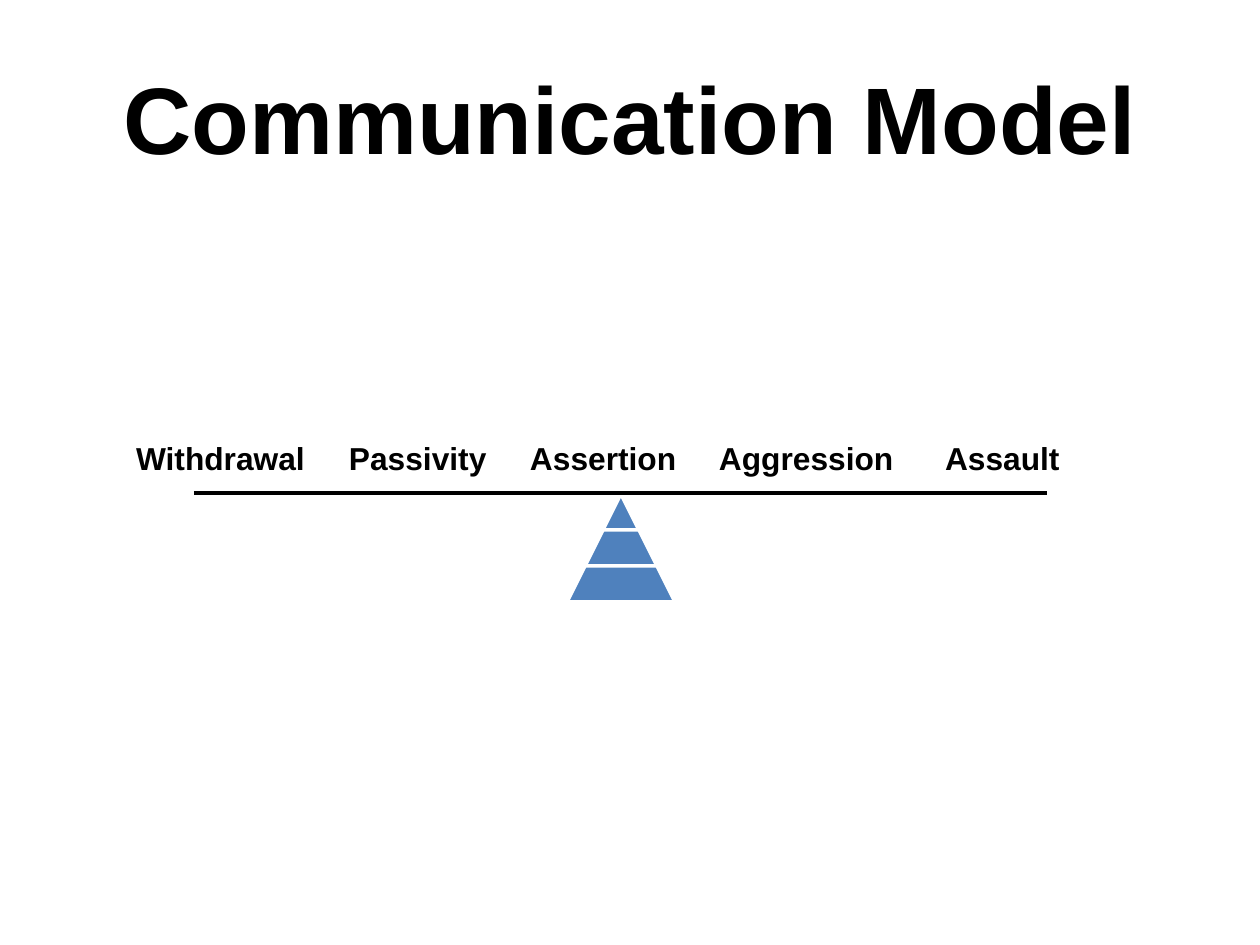
from lxml import etree
from pptx import Presentation
from pptx.dml.color import RGBColor
from pptx.enum.shapes import MSO_CONNECTOR, MSO_SHAPE
from pptx.enum.text import MSO_ANCHOR, MSO_AUTO_SIZE, PP_ALIGN
from pptx.oxml.ns import qn
from pptx.util import Pt

PX = 914400 // 126
LINE, TRAPEZOID = MSO_CONNECTOR.STRAIGHT, MSO_SHAPE.TRAPEZOID
TOP, MIDDLE = MSO_ANCHOR.TOP, MSO_ANCHOR.MIDDLE
LEFT, CENTER = PP_ALIGN.LEFT, PP_ALIGN.CENTER
NO_FIT = MSO_AUTO_SIZE.NONE
TITLE_ONLY = 5


def color(hex_text):
    return RGBColor.from_string(hex_text)


def emu(*lengths):
    return [v * PX for v in lengths]


def write(tf, text, size, font="Arial", fill="000000", bold=True,
          align=LEFT, anchor=TOP):
    tf.auto_size = NO_FIT
    tf.vertical_anchor = anchor
    p = tf.paragraphs[0]
    p.alignment = align
    r = p.add_run()
    r.text = text
    r.font.name, r.font.size, r.font.bold = font, Pt(size), bold
    r.font.color.rgb = color(fill)


class Deck:
    ink, accent, paper = "000000", "4F81BD", "FFFFFF"
    line_width = 2

    def __init__(self, prs):
        self.s = prs.slides.add_slide(prs.slide_layouts[TITLE_ONLY])

    def title(self, text, x, y, w, h):
        sp = self.s.shapes.title
        sp.left, sp.top, sp.width, sp.height = emu(x, y, w, h)
        write(sp.text_frame, text, 54, fill=self.ink, align=CENTER, anchor=MIDDLE)

    def label(self, text, x, y, w, h):
        tf = self.s.shapes.add_textbox(*emu(x, y, w, h)).text_frame
        tf.margin_left = tf.margin_right = tf.margin_top = tf.margin_bottom = 0
        tf.word_wrap = True
        write(tf, text, 18.1, fill=self.ink)

    def trapezoid(self, x, y, w, h):
        sp = self.s.shapes.add_shape(TRAPEZOID, *emu(x, y, w, h))
        sp.adjustments[0] = 0.5
        sp.shadow.inherit = False
        sp.fill.solid()
        sp.fill.fore_color.rgb = color(self.accent)
        sp.line.color.rgb = color(self.paper)
        sp.line.width = Pt(self.line_width)

    def pyramid(self, center, top, step, levels):
        for i in range(levels):
            w = step * (i + 1)
            self.trapezoid(center - w // 2, top + i * step, w, step)

    def line(self, x1, y1, x2, y2):
        c = self.s.shapes.add_connector(LINE, *emu(x1, y1, x2, y2))
        c.line.color.rgb = color(self.ink)
        c.line.width = Pt(self.line_width)
        etree.SubElement(c._element.spPr, qn("a:effectLst"))


def main():
    prs = Presentation()
    prs.slide_width, prs.slide_height = emu(1260, 945)
    deck = Deck(prs)
    deck.title("Communication Model", 63, 38, 1134, 157)
    for text, left in (("Withdrawal", 136), ("Passivity", 349), ("Assertion", 530),
                       ("Aggression", 719), ("Assault", 945)):
        deck.label(text, left, 439, 180, 36)
    deck.pyramid(center=621, top=494, step=36, levels=3)
    deck.line(194, 493, 1047, 493)
    prs.save("out.pptx")


if __name__ == "__main__":
    main()
